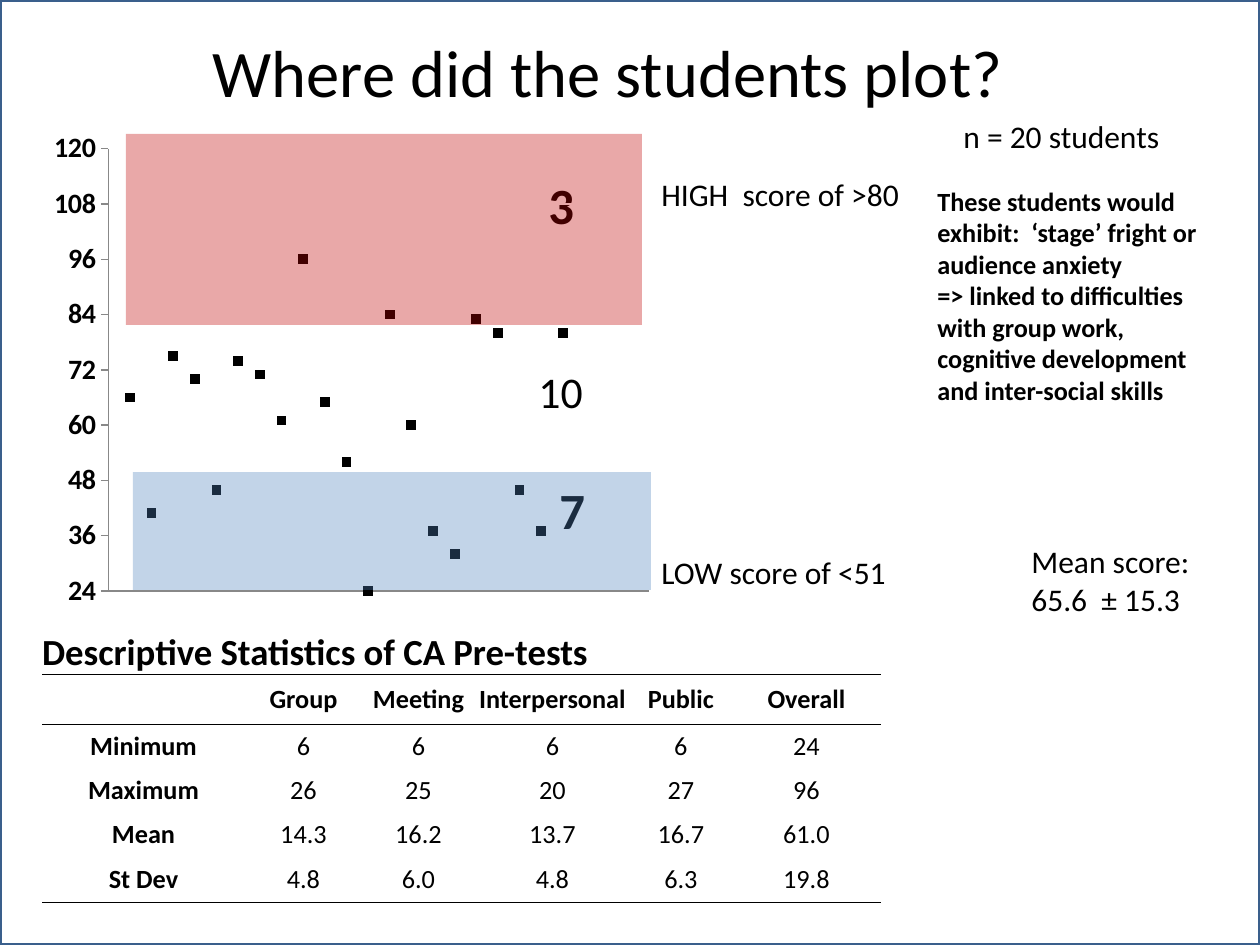
from lxml import etree
from pptx import Presentation
from pptx.chart.data import XyChartData
from pptx.dml.color import RGBColor
from pptx.enum.chart import XL_CHART_TYPE, XL_MARKER_STYLE, XL_TICK_LABEL_POSITION, XL_TICK_MARK
from pptx.enum.shapes import MSO_SHAPE
from pptx.enum.text import MSO_ANCHOR, PP_ALIGN
from pptx.oxml import parse_xml
from pptx.oxml.ns import nsdecls, qn
from pptx.util import Pt

SCATTER = XL_CHART_TYPE.XY_SCATTER
SQUARE = XL_MARKER_STYLE.SQUARE
NO_LABELS = XL_TICK_LABEL_POSITION.NONE
NO_TICK, OUTSIDE = XL_TICK_MARK.NONE, XL_TICK_MARK.OUTSIDE
RECTANGLE = MSO_SHAPE.RECTANGLE
MIDDLE, TOP = MSO_ANCHOR.MIDDLE, MSO_ANCHOR.TOP
LEFT, CENTER = PP_ALIGN.LEFT, PP_ALIGN.CENTER

EMU_PER_PX = 914400 / 126
FONT = "Calibri"
COLORS = {"ink": "000000", "paper": "FFFFFF", "frame": "3A5F8C",
          "axis": "888888", "high": "C00000", "low": "4F81BD"}
SCORES = [66, 41, 75, 70, 46, 74, 71, 61, 96, 65, 52,
          24, 84, 60, 37, 32, 83, 80, 46, 37, 80]
TABLE_TITLE = "Descriptive Statistics of CA Pre-tests"
TABLE_ROWS = [
    ["", "Group", "Meeting", "Interpersonal", "Public", "Overall"],
    ["Minimum", "6", "6", "6", "6", "24"],
    ["Maximum", "26", "25", "20", "27", "96"],
    ["Mean", "14.3", "16.2", "13.7", "16.7", "61.0"],
    ["St Dev", "4.8", "6.0", "4.8", "6.3", "19.8"],
]
COLUMN_WIDTHS = [203, 117, 113, 155, 102, 149]
ROW_HEIGHTS = [44, 50, 44, 45, 44, 45]


def px(length):
    """Turn px into EMU."""
    return round(length * EMU_PER_PX)


def color(name):
    """Look up a named colour."""
    return RGBColor.from_string(COLORS[name])


def style_font(font, size, bold=False):
    """Apply the slide's font in ink colour."""
    font.name, font.size, font.bold = FONT, Pt(size), bold
    font.color.rgb = color("ink")


def add_text(page, box, lines, size, bold=False, align=LEFT, anchor=TOP, gap=0, wrap=True):
    """Add one paragraph per line, with a gap in points between them."""
    frame = page.shapes.add_textbox(*map(px, box)).text_frame
    frame.word_wrap, frame.vertical_anchor = wrap, anchor
    for index, line in enumerate(lines):
        para = frame.paragraphs[0] if index == 0 else frame.add_paragraph()
        para.text, para.alignment = line, align
        para.space_before = Pt(gap if index else 0)
        style_font(para.font, size, bold)


def add_rectangle(page, box, fill, alpha=None, line=None):
    """Add a rectangle with optional opacity in percent and outline."""
    shape = page.shapes.add_shape(RECTANGLE, *map(px, box))
    shape.shadow.inherit = False
    shape.fill.solid()
    shape.fill.fore_color.rgb = color(fill)
    if alpha:
        tint = shape.fill._xPr.find(qn("a:solidFill"))[0]
        etree.SubElement(tint, qn("a:alpha"), val=str(alpha * 1000))
    if line:
        shape.line.color.rgb = color(line)
        shape.line.width = Pt(2)
    else:
        shape.line.fill.background()


def style_axis(axis, low, high, step):
    """Set the range and line of an axis."""
    axis.minimum_scale, axis.maximum_scale, axis.major_unit = low, high, step
    axis.minor_tick_mark = NO_TICK
    axis.format.line.color.rgb = color("axis")
    axis.format.line.width = Pt(0.75)


def add_scores_chart(page, box):
    """Add the scatter of student scores."""
    data = XyChartData()
    series_data = data.add_series("Series 1")
    for student, score in enumerate(SCORES, 1):
        series_data.add_data_point(student, score)
    chart = page.shapes.add_chart(SCATTER, *map(px, box), data).chart
    chart.has_legend = chart.has_title = False
    style_font(chart.font, 18, True)
    chart.plots[0].vary_by_categories = False

    series = chart.plots[0].series[0]
    series.smooth = False
    series.format.line.fill.background()
    marker = series.marker
    marker.style, marker.size = SQUARE, 5
    marker.format.fill.solid()
    marker.format.fill.fore_color.rgb = color("ink")
    marker.format.line.color.rgb = color("ink")

    students, scores = chart.category_axis, chart.value_axis
    style_axis(students, 0, 25, 5)
    students.has_major_gridlines = False
    students.major_tick_mark = NO_TICK
    students.tick_label_position = NO_LABELS
    style_axis(scores, 24, 120, 12)
    scores.major_tick_mark = OUTSIDE
    style_font(scores.tick_labels.font, 16, True)
    grid = scores.major_gridlines.format.line
    grid.color.rgb = color("paper")
    grid.width = Pt(0.75)

    plot_area = chart._chartSpace.chart.plotArea
    for layout in plot_area.findall(qn("c:layout")):
        plot_area.remove(layout)
    places = {"layoutTarget": "inner", "xMode": "edge", "yMode": "edge",
              "x": 0.107, "y": 0.054, "w": 0.873, "h": 0.892}
    parts = "".join(f'<c:{tag} val="{value}"/>' for tag, value in places.items())
    plot_area.insert(0, parse_xml(
        f'<c:layout {nsdecls("c")}><c:manualLayout>{parts}</c:manualLayout></c:layout>'))


def set_borders(cell, ruled_sides):
    """Rule the given sides of a cell, among L, R, T and B, and clear the others."""
    rule = f'<a:solidFill><a:srgbClr val="{COLORS["ink"]}"/></a:solidFill>'
    for side in "LRTB":
        paint = rule if side in ruled_sides else "<a:noFill/>"
        cell._tc.get_or_add_tcPr().append(parse_xml(
            f'<a:ln{side} {nsdecls("a")} w="6350">{paint}</a:ln{side}>'))


def fill_cell(cell, text, size, bold, align, ruled_sides):
    """Write and style one table cell."""
    cell.margin_left = cell.margin_right = cell.margin_top = cell.margin_bottom = 0
    cell.vertical_anchor = MIDDLE
    set_borders(cell, ruled_sides)
    cell.fill.background()
    para = cell.text_frame.paragraphs[0]
    para.text, para.alignment = text, align
    style_font(para.font, size, bold)


def add_statistics_table(page, box):
    """Add the titled table of pre-test statistics."""
    table = page.shapes.add_table(
        len(ROW_HEIGHTS), len(COLUMN_WIDTHS), *map(px, box)).table
    table.first_row = table.horz_banding = False
    for column, width in zip(table.columns, COLUMN_WIDTHS):
        column.width = px(width)
    for row, height in zip(table.rows, ROW_HEIGHTS):
        row.height = px(height)
    table.cell(0, 0).merge(table.cell(0, len(COLUMN_WIDTHS) - 1))
    for column in range(len(COLUMN_WIDTHS)):
        title = TABLE_TITLE if column == 0 else ""
        fill_cell(table.cell(0, column), title, 21, True, LEFT, "B")
    ruled_sides = {1: "TB", 2: "T", len(TABLE_ROWS): "B"}
    for row, texts in enumerate(TABLE_ROWS, 1):
        for column, text in enumerate(texts):
            bold = row == 1 or column == 0
            fill_cell(table.cell(row, column), text, 15, bold, CENTER, ruled_sides.get(row, ""))


def add_score_plot(page, box):
    """Add the chart with its bands and the count in each."""
    left, top, width, height = box
    for x, y, count, size, bold in [(494, 46, "3", 29, True), (505, 351, "7", 29, True),
                                    (484, 237, "10", 25, False)]:
        add_text(page, (left + x, top + y, 147, 74), [count], size, bold)
    add_scores_chart(page, box)
    add_rectangle(page, (left + 91, top + 350, 518, 118), "low", 34)
    add_rectangle(page, (left + 84, top + 12, 516, 191), "high", 34)


def add_notes(page, box):
    """Add the remarks to the right of the plot."""
    left, top, width, height = box
    add_text(page, (left, top + 58, 297, 433),
             ["HIGH  score of >80", "LOW score of <51"], 18, gap=194)
    add_text(page, (left + 276, top + 68, 315, 236),
             ["These students would exhibit:  ‘stage’ fright or audience anxiety",
              "=> linked to difficulties with group work, "
              "cognitive development and inter-social skills"], 15, True)
    add_text(page, (left + 302, top, width - 302, 48), ["n = 20 students"], 18)
    add_text(page, (left + 370, top + 425, 185, 89),
             ["Mean score:", "65.6  ± 15.3"], 18, wrap=False)


def main():
    """Build and save the deck."""
    deck = Presentation()
    deck.slide_width, deck.slide_height = px(1260), px(945)
    page = deck.slides.add_slide(deck.slide_layouts[6])
    add_rectangle(page, (0, 0, 1260, 945), "paper", line="frame")
    add_text(page, (41, -13, 1134, 168), ["Where did the students plot?"], 38,
             align=CENTER, anchor=MIDDLE)
    add_statistics_table(page, (42, 630, 839, 272))
    add_score_plot(page, (42, 122, 620, 496))
    add_notes(page, (649, 111, 611, 514))
    deck.save("out.pptx")


if __name__ == "__main__":
    main()
